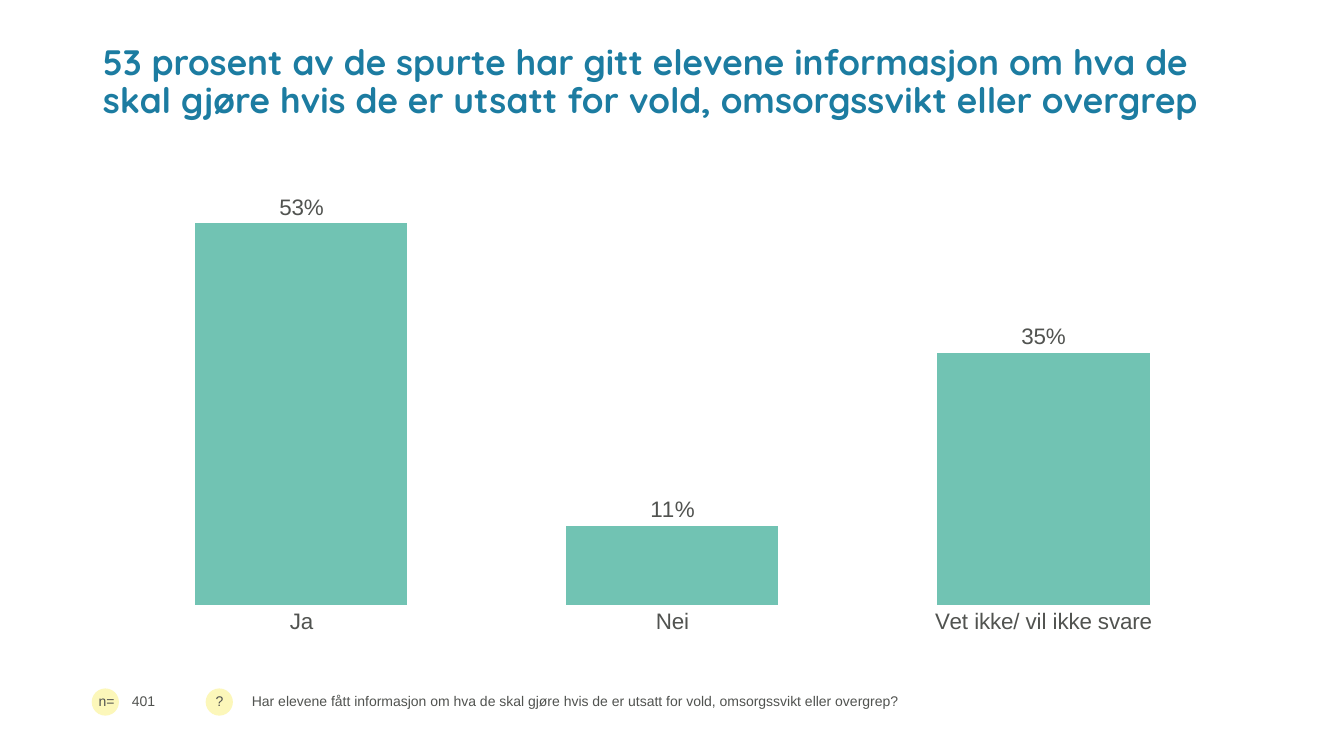
"""Build a slide with a column chart of survey answers."""
from dataclasses import dataclass

from pptx import Presentation, util as u
from pptx.chart.data import CategoryChartData
from pptx.dml.color import RGBColor
from pptx.enum import chart as ch, shapes, text


@dataclass(frozen=True)
class Theme:
    """Colours, fonts and type sizes."""
    blue: str = "1C7CA1"
    green: str = "71C3B3"
    cream: str = "FCF7BA"
    grey: str = "515350"
    head: str = "Quicksand"
    body: str = "Arial"
    title: float = 25.2
    label: float = 16
    note: float = 10


def put(item, form):
    """Set attributes of an item from a dict."""
    for key, val in form.items():
        setattr(item, key, val)


def place(left, top, width, height):
    """Turn four numbers into lengths."""
    return [u.Inches(n) for n in (left, top, width, height)]


class Page:
    """Hold the style and the current slide."""

    def __init__(self, deck, theme):
        """Add a title-only slide."""
        self.theme = theme
        self.slide = deck.slides.add_slide(deck.slide_layouts[5])

    def font(self, font, name, size, color, bold=False):
        """Format a font."""
        put(font, {"name": name, "size": u.Pt(size), "bold": bold})
        font.color.rgb = RGBColor.from_string(color)

    def label(self, shape, words, anchor, inset, wrap=True):
        """Fill a text frame and return its paragraph."""
        frame = shape.text_frame
        put(frame, {"word_wrap": wrap, "vertical_anchor": anchor,
                    "auto_size": text.MSO_AUTO_SIZE.NONE,
                    "margin_top": u.Inches(inset),
                    "margin_bottom": u.Inches(inset)})
        para = frame.paragraphs[0]
        para.text = words
        put(para, {"alignment": text.PP_ALIGN.LEFT, "line_spacing": 0.9})
        return para

    def title(self, words, *box):
        """Move and format the title placeholder."""
        shape = self.slide.shapes.title
        put(shape, dict(zip(("left", "top", "width", "height"), place(*box))))
        para = self.label(shape, words, text.MSO_ANCHOR.TOP, 0.05)
        self.font(para.font, self.theme.head, self.theme.title,
                  self.theme.blue, True)

    def note(self, words, *box):
        """Add a small text box."""
        shape = self.slide.shapes.add_textbox(*place(*box))
        para = self.label(shape, words, text.MSO_ANCHOR.MIDDLE, 0, False)
        self.font(para.font, self.theme.body, self.theme.note, self.theme.grey)

    def dot(self, *box):
        """Add a plain circle."""
        shape = self.slide.shapes.add_shape(
            shapes.MSO_SHAPE.OVAL, *place(*box))
        shape.shadow.inherit = False
        shape.fill.solid()
        shape.fill.fore_color.rgb = RGBColor.from_string(self.theme.cream)
        shape.line.fill.background()

    def chart(self, rows, *box):
        """Add a column chart of shares."""
        look = self.theme
        data = CategoryChartData(number_format="0%")
        data.categories = list(rows)
        data.add_series("Series 1", list(rows.values()))
        chart = self.slide.shapes.add_chart(
            ch.XL_CHART_TYPE.COLUMN_CLUSTERED, *place(*box), data).chart
        put(chart, {"has_legend": False, "has_title": False})
        self.font(chart.font, look.body, look.label, look.grey)

        put(chart.value_axis, {
            "minimum_scale": 0, "maximum_scale": 0.6, "major_unit": 0.2,
            "has_major_gridlines": False, "visible": False})
        axis = chart.category_axis
        put(axis, {"major_tick_mark": ch.XL_TICK_MARK.NONE,
                   "minor_tick_mark": ch.XL_TICK_MARK.NONE,
                   "has_major_gridlines": False})
        axis.format.line.fill.background()
        self.font(axis.tick_labels.font, look.body, look.label, look.grey)

        plot = chart.plots[0]
        put(plot, {"gap_width": 75, "vary_by_categories": False,
                   "has_data_labels": True})
        fill = plot.series[0].format.fill
        fill.solid()
        fill.fore_color.rgb = RGBColor.from_string(look.green)
        labels = plot.data_labels
        put(labels, {"show_value": True, "number_format": "0%",
                     "number_format_is_linked": False,
                     "position": ch.XL_LABEL_POSITION.OUTSIDE_END})
        self.font(labels.font, look.body, look.label, look.grey)


def main():
    """Build and save the deck."""
    deck = Presentation()
    put(deck, {"slide_width": u.Inches(13.33), "slide_height": u.Inches(7.5)})
    page = Page(deck, Theme())
    left, width, foot, size = 0.92, 11.5, 6.83, 0.27

    page.title("53 prosent av de spurte har gitt elevene informasjon om hva "
               "de skal gjøre hvis de er utsatt for vold, omsorgssvikt eller "
               "overgrep", left, 0.4, width, 1.08)
    page.chart({"Ja": 0.53, "Nei": 0.11, "Vet ikke/ vil ikke svare": 0.35},
               left, 1.62, width, 4.76)
    for spot in (0.91, 2.04):
        page.dot(spot, foot, size, size)
    for words, spot, wide in (
            ("n=", 0.88, 0.45), ("401", 1.21, 0.74), ("?", 2.04, 0.25),
            ("Har elevene fått informasjon om hva de skal gjøre hvis de er "
             "utsatt for vold, omsorgssvikt eller overgrep?", 2.4, 9.91)):
        page.note(words, spot, foot, wide, size)
    deck.save("out.pptx")


if __name__ == "__main__":
    main()
